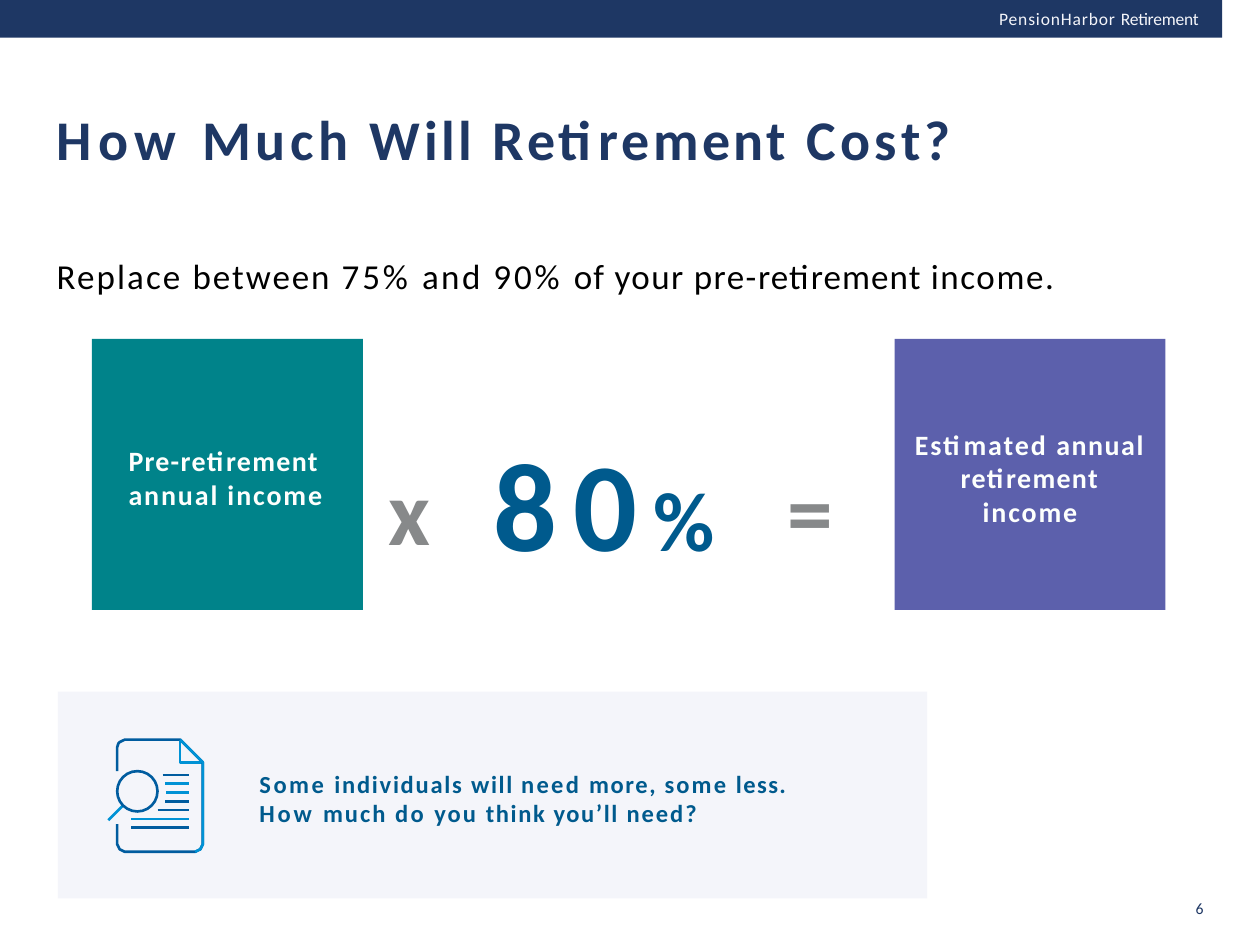
from dataclasses import dataclass

from lxml import etree
from pptx import Presentation
from pptx import util as u
from pptx.dml.color import RGBColor
from pptx.enum import shapes, text
from pptx.oxml.ns import qn


@dataclass(frozen=True)
class Theme:
    font: str = "Calibri"
    navy: str = "1E3764"
    pale: str = "F4F5FA"
    black: str = "000000"
    white: str = "FDFFFD"
    blue: str = "005A8D"
    gray: str = "87898A"
    teal: str = "00838A"
    purple: str = "5C60AC"
    icon_dark: str = "005C9F"
    icon_light: str = "0092D5"
    title: int = 32
    lead: int = 20
    box: int = 16
    note: int = 14
    header: int = 10
    page: int = 9
    operator: int = 90
    factor: int = 72
    percent: int = 48
    stroke: float = 1.5


class SlideBuilder:
    def __init__(self, slide, theme):
        self.slide = slide
        self.theme = theme

    def style(self, font, size, color, bold):
        font.name = self.theme.font
        font.size = u.Pt(size)
        font.bold = bold
        font.color.rgb = RGBColor.from_string(color)

    def frame(self, shape, insets):
        frame = shape.text_frame
        frame.word_wrap = True
        frame.auto_size = text.MSO_AUTO_SIZE.NONE
        frame.vertical_anchor = text.MSO_ANCHOR.TOP
        left, top, right = insets
        frame.margin_left = u.Inches(left)
        frame.margin_top = u.Inches(top)
        frame.margin_right = u.Inches(right)
        frame.margin_bottom = 0
        return frame.paragraphs[0]

    def spaced_run(self, paragraph, words, spacing):
        run = paragraph.add_run()
        run.text = words
        properties = run._r.get_or_add_rPr()
        properties.set("spc", str(round(spacing * 100)))
        return run, properties

    def fill_text(self, shape, runs, size, color, bold=False, insets=(0, 0, 0),
                  align=text.PP_ALIGN.LEFT):
        paragraph = self.frame(shape, insets)
        paragraph.alignment = align
        self.style(paragraph.font, size, color, bold)
        for words, spacing in runs:
            self.spaced_run(paragraph, words, spacing)

    def title(self, bounds, runs, **look):
        heading = self.slide.shapes.title
        heading.left, heading.top, heading.width, heading.height = map(u.Inches, bounds)
        self.fill_text(heading, runs, **look)

    def label(self, bounds, runs, **look):
        self.fill_text(self.slide.shapes.add_textbox(*map(u.Inches, bounds)), runs, **look)

    def equation(self, bounds, tabs, terms):
        box = self.slide.shapes.add_textbox(*map(u.Inches, bounds))
        paragraph = self.frame(box, (0.01, 0.02, 0))
        stops = etree.SubElement(paragraph._p.get_or_add_pPr(), qn("a:tabLst"))
        for stop in tabs:
            etree.SubElement(stops, qn("a:tab"), pos=str(u.Inches(stop)), algn="l")
        for words, spacing, size, color, raised in terms:
            run, properties = self.spaced_run(paragraph, words, spacing)
            properties.set("baseline", str(raised * 1000))
            self.style(run.font, size, color, True)

    def block(self, bounds, fill):
        rect = self.slide.shapes.add_shape(
            shapes.MSO_SHAPE.RECTANGLE, *map(u.Inches, bounds))
        rect.shadow.inherit = False
        rect.fill.solid()
        rect.fill.fore_color.rgb = RGBColor.from_string(fill)
        rect.line.fill.background()
        return rect

    def stroke(self, shape, color):
        shape.line.color.rgb = RGBColor.from_string(color)
        shape.line.width = u.Pt(self.theme.stroke)

    def line(self, start, end, color):
        rule = self.slide.shapes.add_connector(
            shapes.MSO_CONNECTOR.STRAIGHT, *map(u.Inches, (*start, *end)))
        self.stroke(rule, color)
        etree.SubElement(rule._element.spPr, qn("a:effectLst"))

    def outline(self, points, color):
        start, *rest = [tuple(map(u.Inches, point)) for point in points]
        builder = self.slide.shapes.build_freeform(*start)
        builder.add_line_segments(rest, close=False)
        shape = builder.convert_to_shape()
        shape.shadow.inherit = False
        shape.fill.background()
        self.stroke(shape, color)

    def circle(self, bounds, color):
        ring = self.slide.shapes.add_shape(
            shapes.MSO_SHAPE.OVAL, *map(u.Inches, bounds))
        ring.shadow.inherit = False
        ring.fill.background()
        self.stroke(ring, color)

    def document_icon(self):
        dark, light = self.theme.icon_dark, self.theme.icon_light
        right_edge = [(1.55, 6.76), (1.57, 6.75), (1.59, 6.74), (1.6, 6.72),
                      (1.61, 6.7), (1.61, 6.05), (1.43, 5.87)]
        page = [(0.93, 6.54), (0.93, 6.7), (0.94, 6.72), (0.95, 6.74),
                (0.97, 6.75), (0.99, 6.76), *right_edge, (0.99, 5.87),
                (0.97, 5.88), (0.95, 5.89), (0.94, 5.9), (0.93, 5.93), (0.93, 6.12)]
        self.outline([(1.43, 5.87), (1.43, 6.05), (1.61, 6.05)], light)
        self.outline(page, dark)
        text_lines = [(1.29, dark), (1.31, light), (1.32, light), (1.31, dark),
                      (1.25, dark), (1.04, light), (1.04, dark)]
        for row, (left, color) in enumerate(text_lines):
            y = 6.15 + row * 0.07
            self.line((left, y), (1.5, y), color)
        self.line((0.86, 6.51), (0.98, 6.39), light)
        self.circle((0.93, 6.12, 0.32, 0.32), dark)
        self.outline(right_edge, light)


def main():
    deck = Presentation()
    deck.slide_width, deck.slide_height = u.Inches(10), u.Inches(7.5)
    theme = Theme()
    page = SlideBuilder(deck.slides.add_slide(deck.slide_layouts[5]), theme)

    page.block((0, 0, 9.7, 0.3), theme.navy)
    page.label((7.92, 0.04, 1.69, 0.19),
               [("PensionHarbor ", 0.5), ("Retirement", -0.1)],
               size=theme.header, color=theme.pale, insets=(0.01, 0.02, 0))
    page.title((0.37, 0.33, 8.57, 1.1),
               [("How ", 3.7), ("Much ", 2.5), ("Will ", 2.1),
                ("Retirement ", 2), ("Cost?", 2.5)],
               size=theme.title, color=theme.navy, bold=True, insets=(0.08, 0.5, 0))
    page.label((0.44, 1.99, 8.2, 0.36),
               [("Replace ", 1.2), ("between ", 1.1), ("75% ", 1.7), ("and ", 1.4),
                ("90% ", 1.7), ("of ", 0.7), ("your pre-", 0.8),
                ("retirement ", 0.6), ("income.", 0.9)],
               size=theme.lead, color=theme.black, insets=(0.01, 0.03, 0))

    page.equation((3.07, 3.11, 3.74, 1.23), (0.84, 3.17),
                  [("x\t", 11.2, theme.operator, theme.gray, 4),
                   ("80", 9.1, theme.factor, theme.blue, 0),
                   ("%\t", 9.1, theme.percent, theme.blue, 0),
                   ("=", 14, theme.operator, theme.gray, 4)])
    income_boxes = [
        (7.1, theme.purple, (0.14, 0.7, 0.14), text.PP_ALIGN.CENTER,
         [("Estimated ", 1.1), ("annual ", 0.9), ("retirement ", 0.8), ("income", 1.1)]),
        (0.73, theme.teal, (0.29, 0.83, 0), text.PP_ALIGN.LEFT,
         [("Pre-", 0.7), ("retirement ", 0.8), ("annual income", 1.1)]),
    ]
    for left, fill, insets, align, words in income_boxes:
        page.fill_text(page.block((left, 2.69, 2.15, 2.15), fill), words,
                       size=theme.box, color=theme.white, bold=True,
                       insets=insets, align=align)

    page.fill_text(page.block((0.46, 5.49, 6.9, 1.64), theme.pale),
                   [("Some ", 1.4), ("individuals ", 1), ("will ", 0.9),
                    ("need ", 1.3), ("more, ", 0.9), ("some ", 1.2), ("less. ", 0.8),
                    ("How ", 1.6), ("much ", 1.1), ("do ", 1.4), ("you ", 1.2),
                    ("think you’ll ", 0.9), ("need?", 1.1)],
                   size=theme.note, color=theme.blue, bold=True, insets=(1.6, 0.61, 1))
    page.document_icon()
    page.label((9.45, 7.11, 0.17, 0.18), [("6", 0.7)],
               size=theme.page, color=theme.navy, insets=(0.04, 0.02, 0))
    deck.save("out.pptx")


if __name__ == "__main__":
    main()
